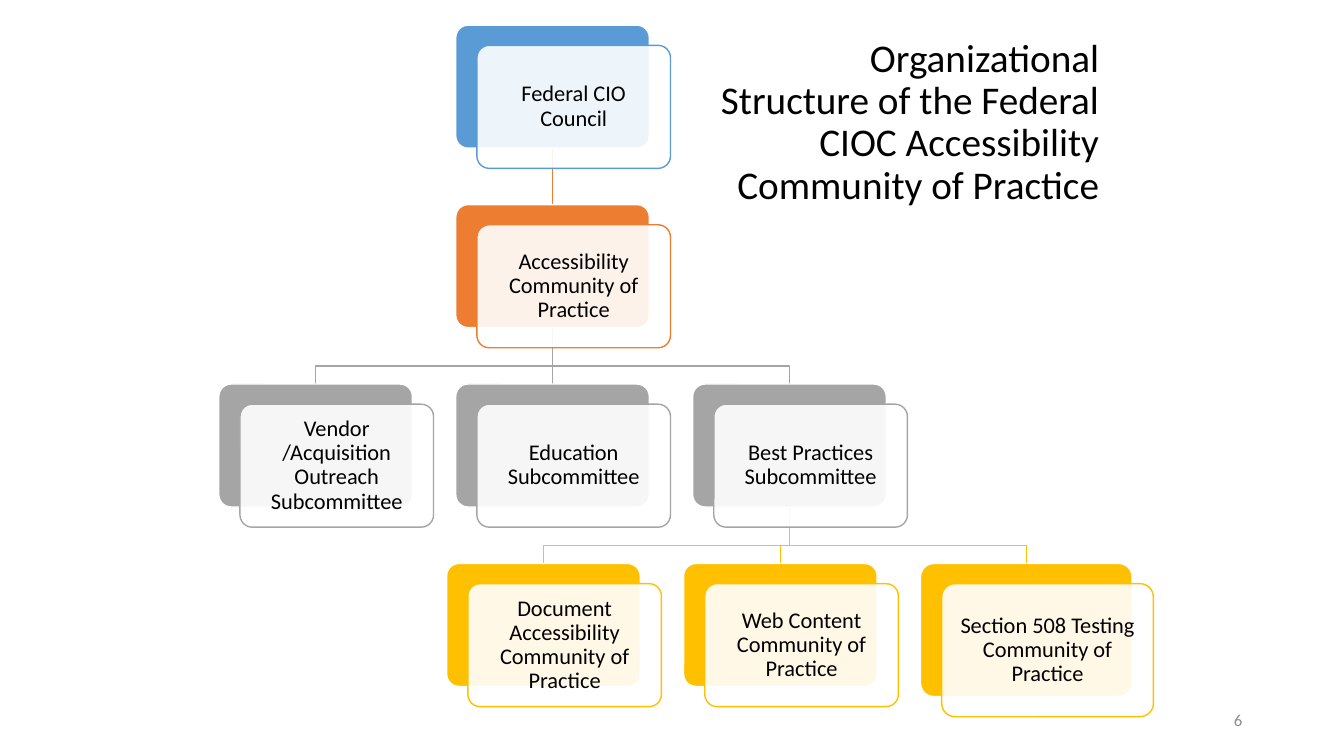
"""Build the slide on the structure of the accessibility community."""

import dataclasses
import typing

import lxml.etree
import pptx
import pptx.dml.color
import pptx.enum.shapes
import pptx.enum.text
import pptx.oxml.ns
import pptx.shapes.autoshape
import pptx.shapes.shapetree
import pptx.text.text
import pptx.util

Inches = pptx.util.Inches
Align = pptx.enum.text.PP_ALIGN
Anchor = pptx.enum.text.MSO_ANCHOR
Tree = pptx.shapes.shapetree.SlideShapes
Shape = pptx.shapes.autoshape.Shape


@dataclasses.dataclass(frozen=True)
class Theme:
    font: str = "Calibri"
    white: str = "FFFFFF"
    black: str = "000000"
    muted: str = "8C8C8C"
    tiers: tuple[str, ...] = ("5B9BD5", "ED7D31", "A5A5A5", "FFC000")
    title: int = 28
    label: int = 16
    number: int = 12
    line: int = 1
    veil: int = 90


@dataclasses.dataclass(frozen=True)
class Card:
    label: str
    tier: int
    left: float
    boss: typing.Optional["Card"] = None
    width: float = 1.92
    height: float = 1.22

    @property
    def top(self) -> float:
        return 0.25 + 1.78 * self.tier

    @property
    def mid(self) -> float:
        return self.left + self.width / 2


THEME = Theme()
PITCH = 2.35
SHIFT_X, SHIFT_Y = 0.21, 0.2
DROP = 0.18

ROOT = Card("Federal CIO Council", 0, 4.52)
GROUP = Card("Accessibility Community of Practice", 1, 4.52, ROOT)
TEAMS = [
    Card(label, 2, 2.17 + PITCH * col, GROUP)
    for col, label in enumerate((
        "Vendor /Acquisition Outreach Subcommittee",
        "Education Subcommittee",
        "Best Practices Subcommittee",
    ))
]
UNITS = [
    Card(label, 3, 4.43 + PITCH * col, TEAMS[2], *size)
    for col, (label, size) in enumerate((
        ("Document Accessibility Community of Practice", ()),
        ("Web Content Community of Practice", ()),
        ("Section 508 Testing Community of Practice", (2.1, 1.32)),
    ))
]
CARDS = [ROOT, GROUP, *TEAMS, *UNITS]


def tint(code: str) -> pptx.dml.color.RGBColor:
    """Turn a hex code into a colour."""
    return pptx.dml.color.RGBColor.from_string(code)


def write(frame: pptx.text.text.TextFrame, text: str, size: int, hue: str,
          align: Align, anchor: Anchor) -> None:
    """Fill a text frame with one styled run."""
    frame.word_wrap = True
    frame.auto_size = pptx.enum.text.MSO_AUTO_SIZE.NONE
    frame.vertical_anchor = anchor
    para = frame.paragraphs[0]
    para.alignment = align
    para.line_spacing = 0.9
    run = para.add_run()
    run.text = text
    run.font.name = THEME.font
    run.font.size = pptx.util.Pt(size)
    run.font.color.rgb = tint(hue)


def draw_link(tree: Tree, card: Card, boss: Card) -> None:
    """Join a card to the one above it, with a bend if needed."""
    start = Inches(boss.mid), Inches(boss.top + boss.height)
    end = Inches(card.mid), Inches(card.top)
    if card.mid == boss.mid:
        link = tree.add_connector(
            pptx.enum.shapes.MSO_CONNECTOR.STRAIGHT, *start, *end)
        lxml.etree.SubElement(
            link.element.spPr, pptx.oxml.ns.qn("a:effectLst"))
    else:
        bend = Inches(card.top - DROP)
        pen = tree.build_freeform(*start)
        pen.add_line_segments(
            [(start[0], bend), (end[0], bend), end], close=False)
        link = pen.convert_to_shape()
        link.fill.background()
        link.shadow.inherit = False
    link.line.color.rgb = tint(THEME.tiers[card.tier])
    link.line.width = pptx.util.Pt(THEME.line)


def draw_plate(tree: Tree, card: Card, shift: tuple[float, float],
               fill: str, line: str) -> Shape:
    """Draw one rounded plate of a card."""
    plate = tree.add_shape(
        pptx.enum.shapes.MSO_SHAPE.ROUNDED_RECTANGLE,
        Inches(card.left + shift[0]), Inches(card.top + shift[1]),
        Inches(card.width), Inches(card.height))
    plate.adjustments[0] = 0.1
    plate.shadow.inherit = False
    plate.fill.solid()
    plate.fill.fore_color.rgb = tint(fill)
    plate.line.color.rgb = tint(line)
    plate.line.width = pptx.util.Pt(THEME.line)
    return plate


def draw_card(tree: Tree, card: Card) -> None:
    """Draw the solid back plate and the clear front plate with its label."""
    hue = THEME.tiers[card.tier]
    draw_plate(tree, card, (0, 0), hue, THEME.white)
    front = draw_plate(tree, card, (SHIFT_X, SHIFT_Y), THEME.white, hue)
    paint = front.element.xpath("./p:spPr/a:solidFill/a:srgbClr")[0]
    alpha = lxml.etree.SubElement(paint, pptx.oxml.ns.qn("a:alpha"))
    alpha.set("val", str(THEME.veil * 1000))
    frame = front.text_frame
    frame.margin_left = frame.margin_right = Inches(0.1)
    frame.margin_top = frame.margin_bottom = Inches(0.1)
    write(frame, card.label, THEME.label, THEME.black,
          Align.CENTER, Anchor.MIDDLE)


def main() -> None:
    """Build and save the deck."""
    deck = pptx.Presentation()
    deck.slide_width, deck.slide_height = Inches(13.33), Inches(7.5)
    slide = deck.slides.add_slide(deck.slide_layouts[5])
    tree = slide.shapes

    title = tree.title
    title.left, title.top = Inches(7), Inches(0.33)
    title.width, title.height = Inches(4), Inches(3.03)
    write(title.text_frame,
          "Organizational Structure of the Federal CIOC Accessibility "
          "Community of Practice",
          THEME.title, THEME.black, Align.RIGHT, Anchor.TOP)

    number = tree.add_textbox(
        Inches(9.42), Inches(6.95), Inches(3), Inches(0.4))
    write(number.text_frame, "6", THEME.number, THEME.muted,
          Align.RIGHT, Anchor.MIDDLE)

    for card in reversed(CARDS):
        if card.boss:
            draw_link(tree, card, card.boss)
    for card in CARDS:
        draw_card(tree, card)
    deck.save("out.pptx")


if __name__ == "__main__":
    main()
